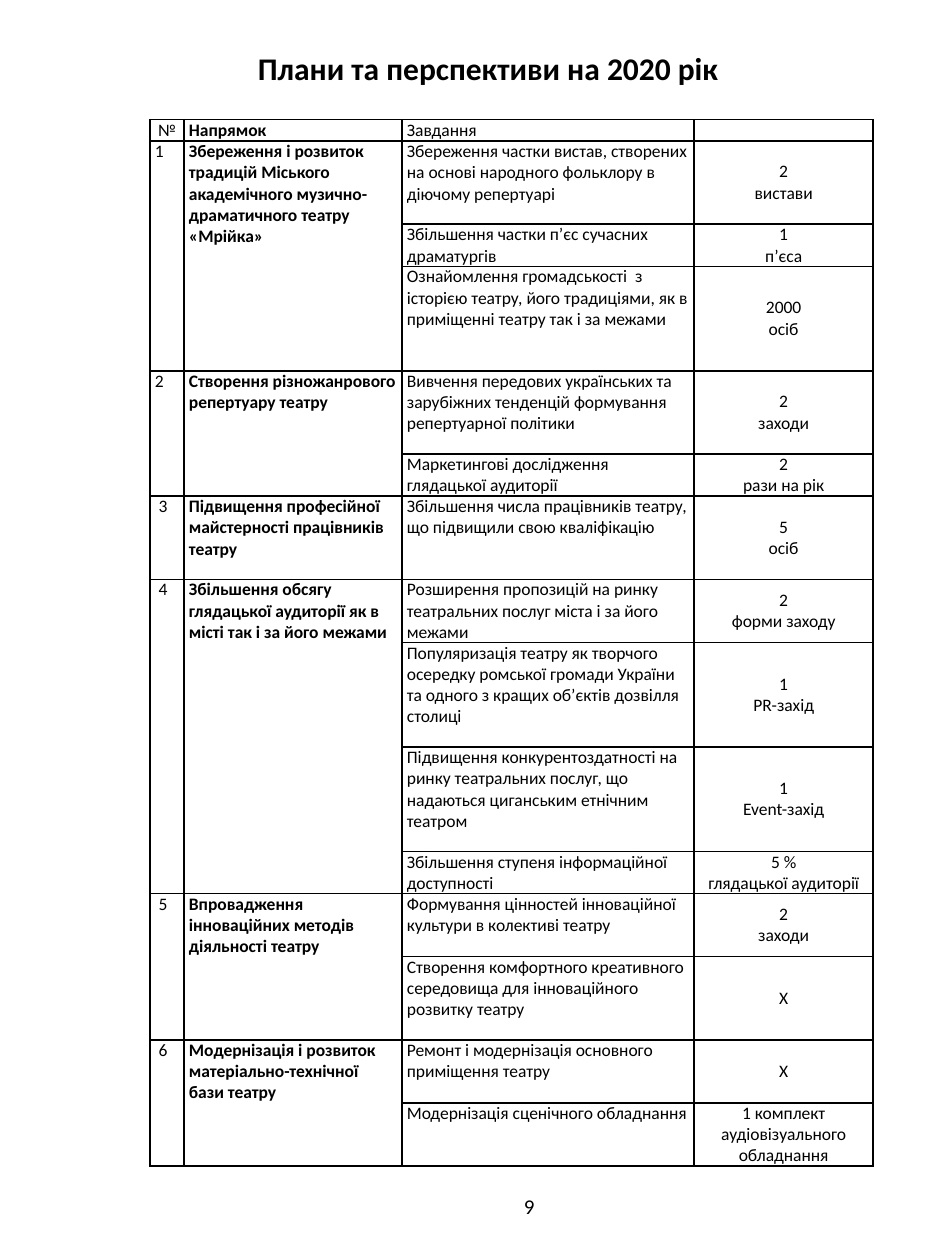
from lxml import etree
from pptx import Presentation
from pptx.dml.color import RGBColor
from pptx.enum.text import MSO_ANCHOR, PP_ALIGN
from pptx.oxml.ns import qn
from pptx.util import Inches, Pt

CENTER, LEFT = PP_ALIGN.CENTER, PP_ALIGN.LEFT
MIDDLE, TOP = MSO_ANCHOR.MIDDLE, MSO_ANCHOR.TOP
COLORS = {"text": "000000", "border": "000000"}
FONT = "Calibri"
BORDER_WIDTH = Pt(1)
COLUMN_WIDTHS = [0.27, 1.73, 2.32, 1.42]
HEADER_HEIGHT = 0.17
HEADINGS = ["№", "Напрямок", "Завдання", ""]

# Each direction holds its tasks: wording, expected result, row height.
DIRECTIONS = [
    ("Збереження і розвиток традицій Міського академічного "
     "музично-драматичного театру «Мрійка»", [
         ("Збереження частки вистав, створених на основі народного фольклору "
          "в діючому репертуарі", "2\nвистави", 0.66),
         ("Збільшення частки п’єс сучасних драматургів", "1\nп’єса", 0.33),
         ("Ознайомлення громадськості  з історією театру, його традиціями, "
          "як в приміщенні театру так і за межами", "2000\nосіб", 0.83),
     ]),
    ("Створення різножанрового репертуару театру", [
        ("Вивчення передових українських та зарубіжних тенденцій формування "
         "репертуарної політики", "2\nзаходи", 0.66),
        ("Маркетингові дослідження глядацької аудиторії",
         "2\nрази на рік", 0.33),
    ]),
    ("Підвищення професійної майстерності працівників театру", [
        ("Збільшення числа працівників театру, що підвищили свою "
         "кваліфікацію", "5\nосіб", 0.66),
    ]),
    ("Збільшення обсягу глядацької аудиторії як в місті так і за його межами", [
        ("Розширення пропозицій на ринку театральних послуг міста і за його "
         "межами", "2\nформи заходу", 0.5),
        ("Популяризація театру як творчого осередку ромської громади України "
         "та одного з кращих об’єктів дозвілля столиці",
         "1\nPR-захід", 0.83),
        ("Підвищення конкурентоздатності на ринку театральних послуг, що "
         "надаються циганським етнічним театром", "1\nEvent-захід", 0.83),
        ("Збільшення ступеня інформаційної доступності",
         "5 %\nглядацької аудиторії", 0.33),
    ]),
    ("Впровадження інноваційних методів діяльності театру", [
        ("Формування цінностей інноваційної культури в колективі театру",
         "2\nзаходи", 0.5),
        ("Створення комфортного креативного середовища для інноваційного "
         "розвитку театру", "Х", 0.66),
    ]),
    ("Модернізація і розвиток матеріально-технічної бази театру", [
        ("Ремонт і модернізація основного приміщення театру", "Х", 0.5),
        ("Модернізація сценічного обладнання",
         "1 комплект аудіовізуального обладнання", 0.5),
    ]),
]


def write_text(frame, text, size, bold=False, align=LEFT):
    frame.text = text
    for paragraph in frame.paragraphs:
        paragraph.alignment = align
        font = paragraph.font
        font.name, font.size, font.bold = FONT, Pt(size), bold
        font.color.rgb = RGBColor.from_string(COLORS["text"])


def add_text(slide, text, left, top, width, height, size, **style):
    box = slide.shapes.add_textbox(
        Inches(left), Inches(top), Inches(width), Inches(height))
    box.text_frame.word_wrap = True
    write_text(box.text_frame, text, size, **style)
    return box.text_frame


def add_borders(cell):
    properties = cell._tc.get_or_add_tcPr()
    for side in ("a:lnL", "a:lnR", "a:lnT", "a:lnB"):
        line = etree.SubElement(properties, qn(side), w=str(BORDER_WIDTH))
        fill = etree.SubElement(line, qn("a:solidFill"))
        etree.SubElement(fill, qn("a:srgbClr"), val=COLORS["border"])


def fill_cell(cell, text, anchor=TOP, indent=0.04, **style):
    cell.margin_left, cell.margin_right = Inches(indent), Inches(0.04)
    cell.margin_top = cell.margin_bottom = 0
    cell.vertical_anchor = anchor
    write_text(cell.text_frame, text, 10, **style)


def add_plan_table(slide):
    heights = [HEADER_HEIGHT] + [
        height for _, tasks in DIRECTIONS for _, _, height in tasks]
    table = slide.shapes.add_table(
        len(heights), len(COLUMN_WIDTHS), Inches(1.19), Inches(0.95),
        Inches(sum(COLUMN_WIDTHS)), Inches(sum(heights))).table
    table.first_row = table.horz_banding = False
    for column, width in zip(table.columns, COLUMN_WIDTHS):
        column.width = Inches(width)
    for row, height in zip(table.rows, heights):
        row.height = Inches(height)
    for cell in table.iter_cells():
        add_borders(cell)
        cell.fill.background()

    for column, heading in enumerate(HEADINGS):
        fill_cell(table.cell(0, column), heading, bold=column == 1,
                  align=CENTER if column == 0 else LEFT)

    first = 1
    for number, (direction, tasks) in enumerate(DIRECTIONS, 1):
        last = first + len(tasks) - 1
        if last > first:
            for column in (0, 1):
                table.cell(first, column).merge(table.cell(last, column))
        fill_cell(table.cell(first, 0), str(number),
                  indent=0.04 if number < 3 else 0.07)
        fill_cell(table.cell(first, 1), direction, bold=True)
        for row, (task, result, _) in enumerate(tasks, first):
            fill_cell(table.cell(row, 2), task)
            fill_cell(table.cell(row, 3), result, anchor=MIDDLE, align=CENTER)
        first = last + 1


def main():
    presentation = Presentation()
    presentation.slide_width, presentation.slide_height = Inches(7.5), Inches(10)
    slide = presentation.slides.add_slide(presentation.slide_layouts[6])
    title = add_text(slide, "Плани та перспективи на 2020 рік",
                     0.5, 0.23, 6.75, 0.66, 18, bold=True, align=CENTER)
    title.vertical_anchor = MIDDLE
    title.paragraphs[0].line_spacing = 0.9
    add_plan_table(slide)
    add_text(slide, "9", 4.06, 9.42, 0.56, 0.3, 12)
    presentation.save("out.pptx")


if __name__ == "__main__":
    main()
